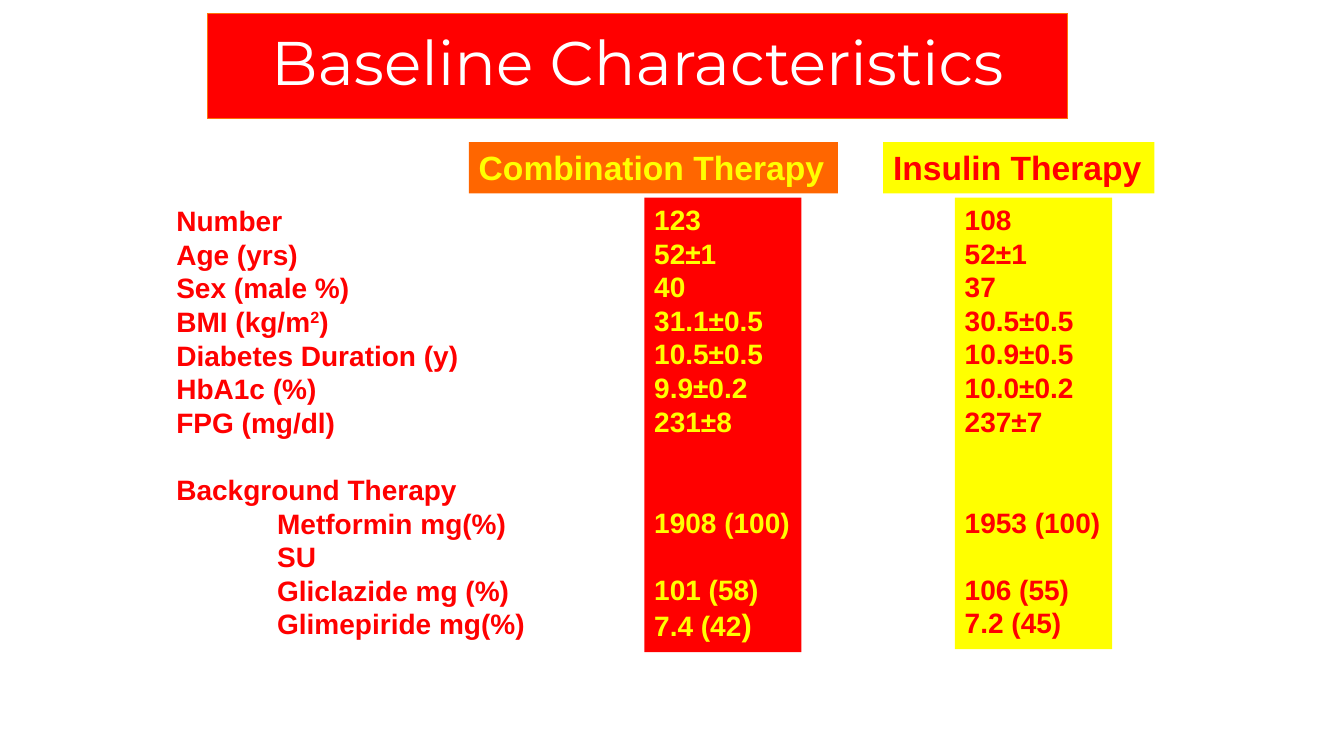
from pptx import Presentation
from pptx.dml.color import RGBColor
from pptx.enum import shapes, text
from pptx.util import Inches, Pt

RED, YELLOW, ORANGE, WHITE = "FF0000", "FFFF00", "FF6600", "FFFFFF"
ROW_PITCH = 24
LABELS = ["Number", "Age (yrs)", "Sex (male %)", "BMI (kg/m^2^)",
          "Diabetes Duration (y)", "HbA1c (%)", "FPG (mg/dl)", None,
          "Background Therapy"]
DRUGS = ["Metformin mg(%)", "SU", "Gliclazide mg (%)", "Glimepiride mg(%)"]
COMBINATION = ["123", "52±1", "40", "31.1±0.5", "10.5±0.5", "9.9±0.2", "231±8",
               None, None, "1908 (100)", None, "101 (58)", "7.4 (42)"]
INSULIN = ["108", "52±1", "37", "30.5±0.5", "10.9±0.5", "10.0±0.2", "237±7",
           None, None, "1953 (100)", None, "106 (55)", "7.2 (45)"]


def color(value):
    return RGBColor.from_string(value)


def format_run(run, size, hue, font="Arial", bold=True):
    run.font.name = font
    run.font.size = Pt(size)
    run.font.bold = bold
    run.font.color.rgb = color(hue)


def add_box(slide, left, top, width, height, fill, outline=None):
    shape = slide.shapes.add_shape(
        shapes.MSO_SHAPE.RECTANGLE,
        Inches(left), Inches(top), Inches(width), Inches(height))
    shape.shadow.inherit = False
    shape.fill.solid()
    shape.fill.fore_color.rgb = color(fill)
    if outline:
        shape.line.color.rgb = color(outline)
        shape.line.width = Pt(0.75)
    else:
        shape.line.fill.background()
    shape.text_frame.word_wrap = False
    shape.text_frame.vertical_anchor = text.MSO_ANCHOR.TOP
    return shape


def add_title(slide, wording):
    frame = add_box(slide, 2.06, 0.13, 8.53, 1.05, RED, "FF7308").text_frame
    frame.word_wrap = True
    frame.vertical_anchor = text.MSO_ANCHOR.MIDDLE
    frame.text = wording
    paragraph = frame.paragraphs[0]
    paragraph.alignment = text.PP_ALIGN.CENTER
    paragraph.line_spacing = 0.9
    format_run(paragraph.runs[0], 44, WHITE, "Montserrat", False)


def add_heading(slide, left, width, wording, fill, hue):
    frame = add_box(slide, left, 1.41, width, 0.51, fill).text_frame
    frame.text = wording
    paragraph = frame.paragraphs[0]
    paragraph.alignment = text.PP_ALIGN.LEFT
    paragraph.line_spacing = Pt(29)
    format_run(paragraph.runs[0], 24, hue)


def fill_rows(frame, rows, hue):
    gap = 0
    paragraph = None
    for row in rows:
        if row is None:
            gap += ROW_PITCH
            continue
        paragraph = frame.add_paragraph() if paragraph else frame.paragraphs[0]
        paragraph.alignment = text.PP_ALIGN.LEFT
        paragraph.line_spacing = Pt(ROW_PITCH)
        paragraph.space_before = Pt(gap)
        gap = 0
        for index, part in enumerate(row.split("^")):
            run = paragraph.add_run()
            run.text = part
            format_run(run, 20, hue)
            if index % 2:
                run.font._element.set("baseline", "30000")


def add_labels(slide):
    frame = slide.shapes.add_textbox(
        Inches(1.65), Inches(1.97), Inches(4.11), Inches(4.48)).text_frame
    frame.word_wrap = True
    fill_rows(frame, LABELS + DRUGS, RED)
    for paragraph in frame.paragraphs[-len(DRUGS):]:
        paragraph._p.get_or_add_pPr().set("marL", str(Inches(1)))


def add_values(slide, left, height, rows, fill, hue):
    frame = add_box(slide, left, 1.96, 1.56, height, fill).text_frame
    fill_rows(frame, rows, hue)
    return frame


def enlarge_last_bracket(frame):
    paragraph = frame.paragraphs[-1]
    paragraph.space_before = Pt(2)
    number = paragraph.runs[0]
    number.text = number.text[:-1]
    bracket = paragraph.add_run()
    bracket.text = ")"
    format_run(bracket, 22, YELLOW)


def main():
    presentation = Presentation()
    presentation.slide_width = Inches(13.33)
    presentation.slide_height = Inches(7.5)
    slide = presentation.slides.add_slide(presentation.slide_layouts[6])
    add_title(slide, "Baseline Characteristics")
    add_labels(slide)
    combination = add_values(slide, 6.39, 4.51, COMBINATION, RED, YELLOW)
    enlarge_last_bracket(combination)
    add_values(slide, 9.47, 4.48, INSULIN, YELLOW, RED)
    add_heading(slide, 4.65, 3.66, "Combination Therapy", ORANGE, YELLOW)
    add_heading(slide, 8.76, 2.69, "Insulin Therapy", YELLOW, RED)
    presentation.save("out.pptx")


if __name__ == "__main__":
    main()
